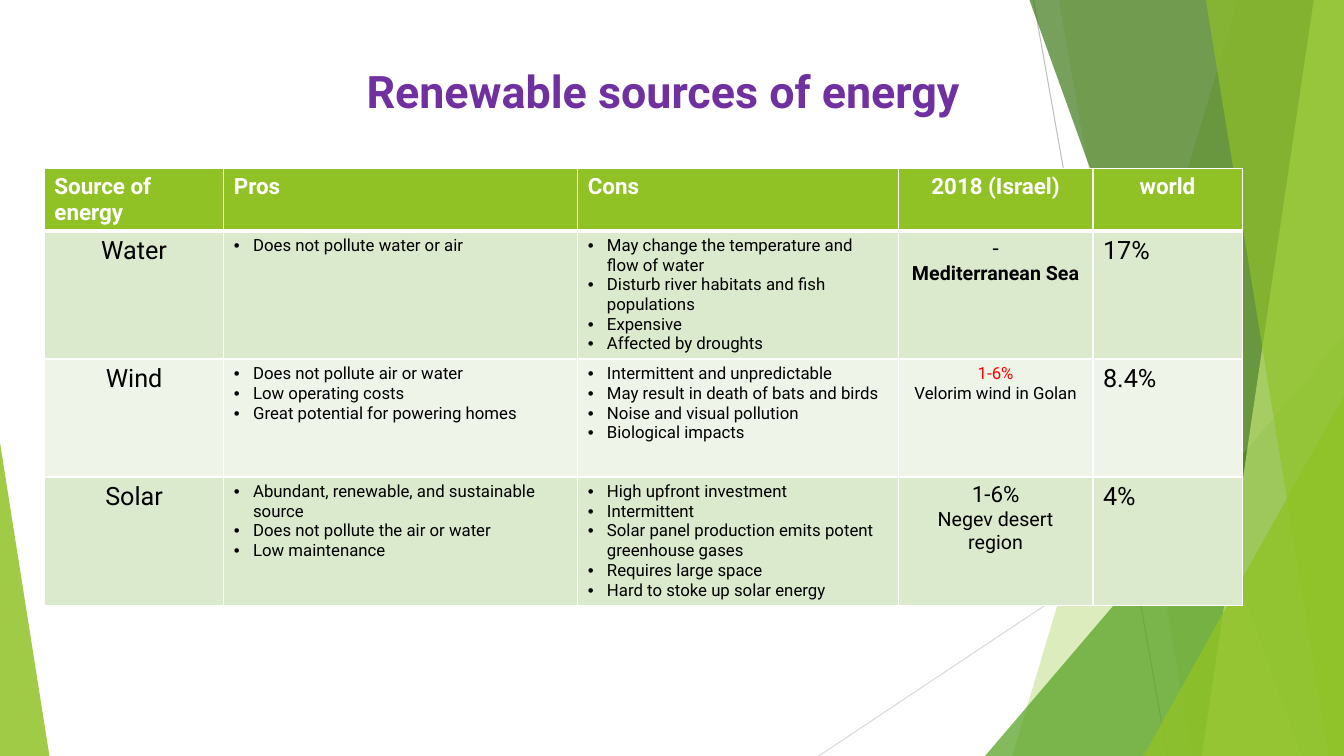
from lxml import etree
from pptx import Presentation
from pptx.dml.color import RGBColor
from pptx.enum.shapes import MSO_CONNECTOR as CONN, MSO_SHAPE as SHAPE
from pptx.enum.text import MSO_ANCHOR, PP_ALIGN
from pptx.oxml.ns import qn
from pptx.util import Inches, Pt

WHITE = RGBColor(0xFF, 0xFF, 0xFF)
BLACK = RGBColor(0, 0, 0)
RED = RGBColor(0xFF, 0, 0)
PURPLE = RGBColor(0x70, 0x30, 0xA0)
GREEN = RGBColor(0x90, 0xC2, 0x26)
LEAF = RGBColor(0x54, 0xA0, 0x21)
FOREST = RGBColor(0x3F, 0x78, 0x19)
LIME = RGBColor(0xC0, 0xE4, 0x74)
PALE = RGBColor(0xDB, 0xE9, 0xCD)
PALER = RGBColor(0xEE, 0xF4, 0xE8)
GREY = RGBColor(0xBF, 0xBF, 0xBF)
LIGHT_GREY = RGBColor(0xD9, 0xD9, 0xD9)
FONT = "Roboto"
W, H = 13.33, 7.5

COL_WIDTHS = [1.78, 3.51, 3.18, 1.93, 1.48]
ROW_HEIGHTS = [0.62, 1.27, 1.17, 1.27]
HEADERS = ["Source of energy", "Pros", "Cons", "2018 (Israel)", "world"]
# source, pros, cons, Israel lines (text, format), world share
SOURCES = [
    ("Water",
     ["Does not pollute water or air"],
     ["May change the temperature and flow of water",
      "Disturb river habitats and fish populations",
      "Expensive", "Affected by droughts"],
     [("-", dict(size=16)), ("Mediterranean Sea", dict(size=14, bold=True))],
     "17%"),
    ("Wind",
     ["Does not pollute air or water", "Low operating costs",
      "Great potential for powering homes"],
     ["Intermittent and unpredictable",
      "May result in death of bats and birds",
      "Noise and visual pollution", "Biological impacts"],
     [("1-6%", dict(size=12, color=RED)),
      ("Velorim wind in Golan", dict(size=12))],
     "8.4%"),
    ("Solar",
     ["Abundant, renewable, and sustainable source",
      "Does not pollute the air or water", "Low maintenance"],
     ["High upfront investment", "Intermittent",
      "Solar panel production emits potent greenhouse gases",
      "Requires large space", "Hard to stoke up solar energy"],
     [("1-6%", dict(size=16)), ("Negev desert region", dict(size=14))],
     "4%"),
]


def write(p, text, size=18, color=BLACK, bold=False, align=PP_ALIGN.LEFT,
          bullet=False):
    """Put formatted text in a paragraph."""
    p.alignment = align
    r = p.add_run()
    r.text = text
    r.font.name = FONT
    r.font.size = Pt(size)
    r.font.bold = bold
    r.font.color.rgb = color
    if bullet:
        pPr = p._p.get_or_add_pPr()
        pPr.set("marL", str(Inches(0.19)))
        pPr.set("indent", str(-Inches(0.19)))
        etree.SubElement(pPr, qn("a:buFont")).set("typeface", "Arial")
        etree.SubElement(pPr, qn("a:buChar")).set("char", "•")


def write_lines(tf, lines, **common):
    """Write one paragraph for each (text, format) pair."""
    for i, (text, fmt) in enumerate(lines):
        p = tf.add_paragraph() if i else tf.paragraphs[0]
        write(p, text, **{**common, **fmt})


def paint(sp, color, opacity):
    sp.shadow.inherit = False
    sp.line.fill.background()
    sp.fill.solid()
    sp.fill.fore_color.rgb = color
    clr = sp._element.spPr.find(qn("a:solidFill"))[0]
    etree.SubElement(clr, qn("a:alpha")).set("val", str(opacity * 1000))


def add_line(s, x1, y1, x2, y2, color):
    line = s.shapes.add_connector(CONN.STRAIGHT, Inches(x1), Inches(y1),
                                  Inches(x2), Inches(y2))
    line.line.color.rgb = color
    line.line.width = Pt(0.75)
    etree.SubElement(line._element.spPr, qn("a:effectLst"))


def add_band(s, top_x, bottom_x, color, opacity):
    """Fill from a slanted left edge to the slide's right edge."""
    fb = s.shapes.build_freeform(Inches(top_x), 0)
    corners = [(W, 0), (W, H), (bottom_x, H)]
    fb.add_line_segments([(Inches(x), Inches(y)) for x, y in corners])
    paint(fb.convert_to_shape(), color, opacity)


def add_triangle(s, x, y, w, apex, color, opacity):
    """Triangle standing on the slide's bottom edge."""
    sp = s.shapes.add_shape(SHAPE.ISOSCELES_TRIANGLE, Inches(x), Inches(y),
                            Inches(w), Inches(H - y))
    sp.adjustments[0] = apex
    paint(sp, color, opacity)


def add_background(s):
    add_line(s, 10.25, 0, 11.58, H, GREY)
    add_line(s, W, 4.03, 8.12, H, LIGHT_GREY)
    add_band(s, 12.28, 10.04, GREEN, 30)
    add_band(s, 10.5, 11.83, GREEN, 20)
    add_triangle(s, 9.77, 3.33, 3.56, 1, LEAF, 72)
    add_band(s, 10.21, 12.91, FOREST, 70)
    add_band(s, 13.03, 11.92, LIME, 70)
    add_band(s, 11.96, 13.18, GREEN, 65)
    add_triangle(s, 11.34, 3.93, 1.99, 1, GREEN, 80)
    add_triangle(s, 0, 4.39, 0.49, 0, GREEN, 85)


def style_cell(cell, color, top=1, bottom=1):
    tcPr = cell._tc.get_or_add_tcPr()
    for side, width in zip("LRTB", (1, 1, top, bottom)):
        ln = etree.SubElement(tcPr, qn(f"a:ln{side}"), w=str(Pt(width)))
        fill = etree.SubElement(ln, qn("a:solidFill"))
        etree.SubElement(fill, qn("a:srgbClr"), val=str(WHITE))
    cell.fill.solid()
    cell.fill.fore_color.rgb = color


def add_energy_table(s):
    frame = s.shapes.add_table(
        len(ROW_HEIGHTS), len(COL_WIDTHS), Inches(0.44), Inches(1.67),
        Inches(sum(COL_WIDTHS)), Inches(sum(ROW_HEIGHTS)))
    table = frame.table
    for col, width in zip(table.columns, COL_WIDTHS):
        col.width = Inches(width)
    for row, height in zip(table.rows, ROW_HEIGHTS):
        row.height = Inches(height)

    # Header row
    for i, text in enumerate(HEADERS):
        cell = table.cell(0, i)
        style_cell(cell, GREEN, bottom=3)
        align = PP_ALIGN.CENTER if i > 2 else PP_ALIGN.LEFT
        write(cell.text_frame.paragraphs[0], text, size=16, color=WHITE,
              bold=True, align=align)

    # One row per energy source
    for i, (name, pros, cons, israel, world) in enumerate(SOURCES, 1):
        cells = table.rows[i].cells
        for cell in cells:
            style_cell(cell, PALE if i % 2 else PALER, top=3 if i == 1 else 1)
        tfs = [cell.text_frame for cell in cells]
        write_lines(tfs[0], [(name, {})], align=PP_ALIGN.CENTER)
        for tf, points in zip(tfs[1:3], (pros, cons)):
            write_lines(tf, [(t, {}) for t in points], size=12, bullet=True)
        write_lines(tfs[3], israel, align=PP_ALIGN.CENTER)
        write_lines(tfs[4], [(world, {})])


def add_title(s, text):
    title = s.shapes.title
    title.left, title.top = Inches(3.02), Inches(0.58)
    title.width, title.height = Inches(7.12), Inches(0.64)
    tf = title.text_frame
    tf.word_wrap = True
    tf.vertical_anchor = MSO_ANCHOR.MIDDLE
    write(tf.paragraphs[0], text, size=32, color=PURPLE, bold=True,
          align=PP_ALIGN.CENTER)


def main():
    prs = Presentation()
    prs.slide_width, prs.slide_height = Inches(W), Inches(H)
    s = prs.slides.add_slide(prs.slide_layouts[5])
    add_background(s)
    add_energy_table(s)
    add_title(s, "Renewable sources of energy")
    prs.save("out.pptx")


if __name__ == "__main__":
    main()
